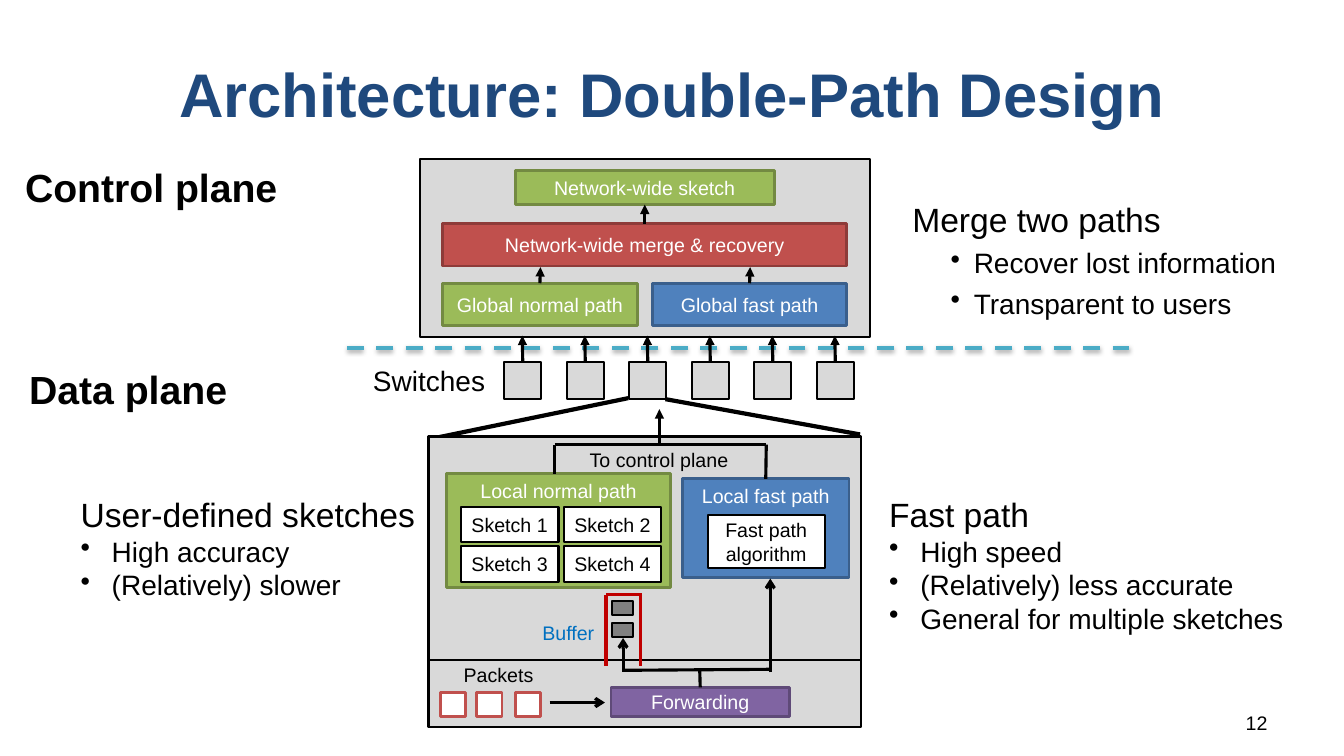
from pptx import Presentation
from pptx.dml.color import RGBColor
from pptx.enum.dml import MSO_LINE
from pptx.enum.shapes import MSO_CONNECTOR, MSO_SHAPE
from pptx.enum.text import MSO_ANCHOR, PP_ALIGN
from pptx.oxml import parse_xml
from pptx.oxml.ns import nsdecls, qn
from pptx.util import Pt

PX = 9144
FONT = "Arial"
RECTANGLE, STRAIGHT = MSO_SHAPE.RECTANGLE, MSO_CONNECTOR.STRAIGHT
LEFT, CENTER, RIGHT = PP_ALIGN.LEFT, PP_ALIGN.CENTER, PP_ALIGN.RIGHT
TOP, MIDDLE = MSO_ANCHOR.TOP, MSO_ANCHOR.MIDDLE
DASH = MSO_LINE.DASH
TOP_SIDE, BOTTOM_SIDE = 0, 2
BLACK, WHITE, GREY, DARK_GREY = "000000", "FFFFFF", "D9D9D9", "808080"
GREEN, BLUE, RED, PURPLE = "9BBB59", "4F81BD", "C0504D", "8064A2"
EDGES = {GREEN: "738A42", BLUE: "3A5F8C", RED: "8E3B39", PURPLE: "5F4A78"}
NAVY, TEAL, DARK_RED, SKY = "1F497D", "4BACC6", "C00000", "0070C0"


def color(value):
    """Turn a hex string into a colour."""
    return RGBColor.from_string(value)


def lengths(*values):
    """Turn px into EMU."""
    return [value * PX for value in values]


def style(para, size, ink, align=LEFT, bold=False):
    """Format one paragraph and its runs."""
    para.alignment = align
    for span in para.runs:
        span.font.name = FONT
        span.font.size = Pt(size)
        span.font.bold = bold
        span.font.color.rgb = color(ink)


def bullet(para, indent, hang):
    """Give a paragraph a hanging bullet."""
    properties = para._p.get_or_add_pPr()
    properties.set("marL", str(indent * PX))
    properties.set("indent", str(-hang * PX))
    properties.append(parse_xml(f'<a:buChar {nsdecls("a")} char="•"/>'))


def label(page, place, text, size, ink=BLACK, align=LEFT, bold=False, wrap=True):
    """Add a text box with one format."""
    box = page.shapes.add_textbox(*lengths(*place))
    box.text_frame.word_wrap = wrap
    box.text_frame.text = text
    for para in box.text_frame.paragraphs:
        style(para, size, ink, align, bold)


def notes(page, place, heading, points, indent=31, hang=31, gap=0):
    """Add a heading with bullet points under it."""
    box = page.shapes.add_textbox(*lengths(*place))
    box.text_frame.word_wrap = True
    box.text_frame.text = "\n".join([heading, *points])
    first, *others = box.text_frame.paragraphs
    style(first, 24, BLACK)
    for para in others:
        style(para, 20, BLACK)
        para.space_before = Pt(gap)
        bullet(para, indent, hang)


def block(page, place, fill, text="", edge=BLACK, width=1.5, ink=BLACK, anchor=MIDDLE):
    """Add a rectangle, with centred text if any."""
    box = page.shapes.add_shape(RECTANGLE, *lengths(*place))
    box.shadow.inherit = False
    box.fill.solid()
    box.fill.fore_color.rgb = color(fill)
    if edge:
        box.line.color.rgb = color(edge)
        box.line.width = Pt(width)
    else:
        box.line.fill.background()
    if text:
        frame = box.text_frame
        frame.margin_left = frame.margin_right = 0
        frame.vertical_anchor = anchor
        frame.text = text
        for para in frame.paragraphs:
            style(para, 14, ink, CENTER)
    return box


def stage(page, place, fill, text, anchor=MIDDLE):
    """Add a coloured processing block with white text."""
    return block(page, place, fill, text, EDGES[fill], 2, WHITE, anchor)


def link(page, start, end, ink=BLACK, width=2.25, head=None, source=None, target=None):
    """Add a straight line, joined to (box, side) pairs if given."""
    line = page.shapes.add_connector(STRAIGHT, *lengths(*start, *end))
    line.line.color.rgb = color(ink)
    line.line.width = Pt(width)
    if source:
        line.begin_connect(*source)
    if target:
        line.end_connect(*target)
    properties = line.element.spPr
    if head:
        properties.find(qn("a:ln")).append(
            parse_xml(f'<a:tailEnd {nsdecls("a")} type="{head}"/>'))
    properties.append(parse_xml(f'<a:effectLst {nsdecls("a")}/>'))
    return line


def plane_divider(page):
    """Add the dashed, shadowed line between the planes."""
    line = link(page, (344, 345), (1128, 345), TEAL, 3)
    line.line.dash_style = DASH
    line.element.spPr.find(qn("a:effectLst")).append(parse_xml(
        f'<a:outerShdw {nsdecls("a")} blurRad="40000" dist="23000" dir="5400000" '
        'rotWithShape="0"><a:srgbClr val="000000"><a:alpha val="35000"/>'
        '</a:srgbClr></a:outerShdw>'))


def control_plane(page):
    """Draw the network-wide stages."""
    block(page, (417, 158, 446, 176), GREY)
    merge = stage(page, (439, 222, 401, 42), RED, "Network-wide merge & recovery")
    sketch = stage(page, (511, 169, 257, 34), GREEN, "Network-wide sketch")
    link(page, (639, 222), (639, 203), head="triangle",
         source=(merge, TOP_SIDE), target=(sketch, BOTTOM_SIDE))
    for left, fill, text in ((439, GREEN, "Global normal path"),
                             (647, BLUE, "Global fast path")):
        box = stage(page, (left, 281, 193, 42), fill, text)
        link(page, (left + 97, 281), (left + 97, 265), head="triangle",
             source=(box, TOP_SIDE))


def switches(page):
    """Draw the row of switches and the zoom lines below it."""
    label(page, (360, 356, 133, 44), "Switches", 20, wrap=False)
    for left in range(500, 811, 62):
        box = block(page, (left, 359, 37, 37), GREY)
        link(page, (left + 18, 359), (left + 18, 333), head="triangle",
             source=(box, TOP_SIDE))
    link(page, (623, 395), (434, 434), width=3)
    link(page, (660, 396), (853, 431), width=3)


def local_paths(page):
    """Draw the two paths in a switch and their way up."""
    block(page, (425, 433, 429, 288), GREY)
    link(page, (425, 655), (854, 655), width=1.5)
    stage(page, (443, 470, 222, 113), GREEN, "Local normal path", TOP)
    fast = stage(page, (677, 475, 165, 98), BLUE, "Local fast path", TOP)
    block(page, (702, 511, 116, 53), WHITE, "Fast path\nalgorithm")
    for index in range(4):
        row, column = divmod(index, 2)
        block(page, (457 + 102 * column, 503 + 39 * row, 97, 35), WHITE,
              f"Sketch {index + 1}")
    link(page, (550, 470), (550, 441))
    link(page, (760, 475), (760, 441), source=(fast, TOP_SIDE))
    link(page, (550, 441), (760, 441))
    link(page, (654, 442), (654, 406), head="triangle")
    label(page, (575, 439, 163, 33), "To control plane", 14, wrap=False)


def packet_input(page):
    """Draw the buffer, the packets and their forwarding."""
    block(page, (600, 591, 34, 56), GREY, edge=None)
    for start, end in (((601, 590), (601, 661)), ((635, 590), (635, 661)),
                       ((637, 590), (601, 590))):
        link(page, start, end, DARK_RED)
    for top in (596, 618):
        block(page, (607, top, 21, 14), DARK_GREY)
    label(page, (528, 611, 89, 26), "Buffer", 14, SKY)
    forwarding = stage(page, (606, 682, 177, 29), PURPLE, "Forwarding")
    link(page, (694, 664), (694, 682), target=(forwarding, TOP_SIDE))
    link(page, (617, 665), (764, 664))
    link(page, (618, 666), (618, 633), head="arrow")
    link(page, (764, 667), (764, 574), head="arrow")
    label(page, (450, 653, 106, 33), "Packets", 14)
    for left in (437, 473, 511):
        block(page, (left, 687, 25, 24), WHITE, edge=RED, width=2)
    link(page, (545, 697), (600, 697), head="arrow")


def main():
    """Build the slide and save it."""
    deck = Presentation()
    deck.slide_width, deck.slide_height = lengths(1333, 750)
    page = deck.slides.add_slide(deck.slide_layouts[5])
    title = page.shapes.title
    title.left, title.top, title.width, title.height = lengths(67, 30, 1200, 125)
    title.text_frame.text = "Architecture: Double-Path Design"
    title.text_frame.vertical_anchor = MIDDLE
    style(title.text_frame.paragraphs[0], 44, NAVY, CENTER, True)
    label(page, (956, 700, 311, 35), "12", 14, align=RIGHT)
    plane_divider(page)
    control_plane(page)
    switches(page)
    local_paths(page)
    packet_input(page)
    label(page, (13, 157, 274, 57), "Control plane", 28, align=CENTER, bold=True)
    label(page, (13, 358, 228, 57), "Data plane", 28, align=CENTER, bold=True)
    notes(page, (895, 192, 436, 59), "Merge two paths",
          ["Recover lost information", "Transparent to users"], 61, 23, 5)
    notes(page, (70, 485, 359, 118), "User-defined sketches",
          ["High accuracy", "(Relatively) slower"])
    notes(page, (872, 485, 416, 151), "Fast path",
          ["High speed", "(Relatively) less accurate", "General for multiple sketches"])
    deck.save("out.pptx")


if __name__ == "__main__":
    main()
